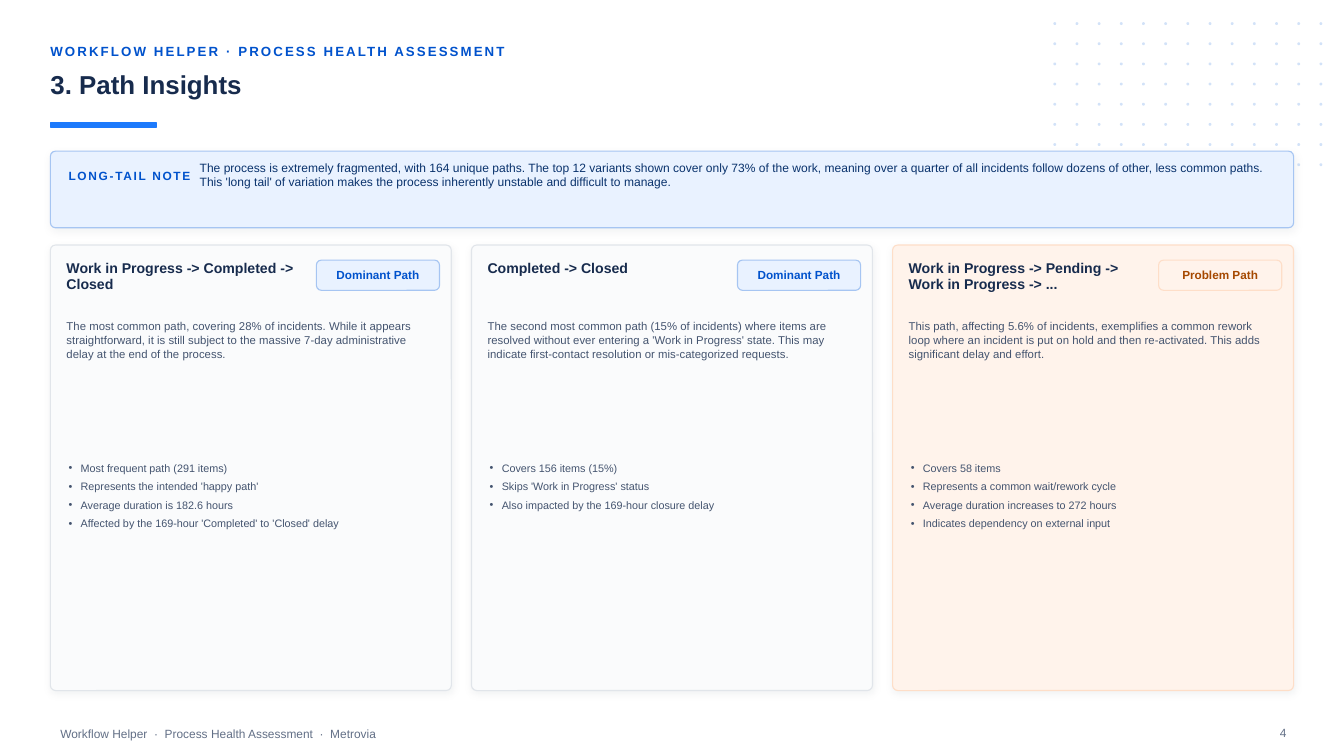
"""Build the path insights slide with a note band and three path cards."""
import itertools

import pptx
import pptx.dml.color
import pptx.enum.shapes
import pptx.enum.text
import pptx.oxml
import pptx.util
from lxml import etree

Pt = pptx.util.Pt
RGBColor = pptx.dml.color.RGBColor
KIND = pptx.enum.shapes.MSO_SHAPE
ANCHOR = pptx.enum.text.MSO_ANCHOR
ALIGN = pptx.enum.text.PP_ALIGN
NS = "http://schemas.openxmlformats.org/drawingml/2006/main"

NAVY = RGBColor(0x17, 0x2B, 0x4D)
DEEP = RGBColor(0x09, 0x32, 0x6C)
BLUE = RGBColor(0x00, 0x52, 0xCC)
BRIGHT = RGBColor(0x1D, 0x7A, 0xFC)
PALE = RGBColor(0xE9, 0xF2, 0xFF)
SKY = RGBColor(0xA6, 0xC5, 0xF2)
DOT = RGBColor(0xCF, 0xE0, 0xF8)
SLATE = RGBColor(0x44, 0x54, 0x6F)
GREY = RGBColor(0x62, 0x6F, 0x86)
CLOUD = RGBColor(0xFA, 0xFB, 0xFC)
EDGE = RGBColor(0xE1, 0xE5, 0xEA)
PEACH = RGBColor(0xFF, 0xF3, 0xEB)
CORAL = RGBColor(0xFE, 0xDE, 0xC8)
RUST = RGBColor(0xA5, 0x48, 0x00)

SHADE = (
    f'<a:effectLst xmlns:a="{NS}"><a:outerShdw blurRad="{Pt(6)}" dist="{Pt(1.5)}" '
    'dir="5400000" algn="ctr" rotWithShape="0"><a:srgbClr val="122A35">'
    '<a:alpha val="6000"/></a:srgbClr></a:outerShdw></a:effectLst>'
)

deck = pptx.Presentation()
deck.slide_width, deck.slide_height = Pt(960), Pt(540)
slide = deck.slides.add_slide(deck.slide_layouts[5])
shapes = slide.shapes


def write(text, size, color, place=None, shape=None, bold=False, lead=None,
          track=0, anchor=ANCHOR.TOP, inset=0, align=ALIGN.LEFT, gap=0):
    shape = shape or shapes.add_textbox(*map(Pt, place))
    frame = shape.text_frame
    frame.text = text
    frame.word_wrap = True
    frame.auto_size = pptx.enum.text.MSO_AUTO_SIZE.NONE
    frame.vertical_anchor = anchor
    frame.margin_left = frame.margin_right = Pt(inset)
    frame.margin_top = frame.margin_bottom = Pt(inset / 2)
    for para in frame.paragraphs:
        para.alignment = align
        if lead:
            para.line_spacing = Pt(lead)
        if gap:
            para.space_after = Pt(gap)
        for run in para.runs:
            run.font.name = "Arial"
            run.font.size = Pt(size)
            run.font.bold = bold
            run.font.color.rgb = color
            if track:
                run.font._element.set("spc", str(int(track * 100)))
    return frame


def panel(kind, place, fill, line=None, width=0.8, corner=None, shade=False):
    shape = shapes.add_shape(kind, *map(Pt, place))
    shape.shadow.inherit = False
    shape.fill.solid()
    shape.fill.fore_color.rgb = fill
    if line is None:
        shape.line.fill.background()
    else:
        shape.line.color.rgb = line
        shape.line.width = Pt(width)
    if corner is not None:
        shape.adjustments[0] = corner
    if shade:
        props = shape._element.spPr
        props.replace(props.find(f"{{{NS}}}effectLst"), pptx.oxml.parse_xml(SHADE))
    return shape


write("Workflow Helper  ·  Process Health Assessment  ·  Metrovia", 8.5, GREY,
      (36, 514.8, 684, 18), anchor=ANCHOR.MIDDLE, inset=7.2)

for row, col in itertools.product(range(8), range(13)):
    if row < 7 or col > 10:
        dot = panel(KIND.OVAL, (752.4 + 15.84 * col, 15.84 + 14.4 * row, 2, 2), DOT)
        tint = dot._element.spPr.find(f".//{{{NS}}}srgbClr")
        etree.SubElement(tint, f"{{{NS}}}alpha", val="92000")

write("WORKFLOW HELPER · PROCESS HEALTH ASSESSMENT", 9.5, BLUE, (36, 28.8, 888, 16),
      bold=True, track=1.5, anchor=ANCHOR.MIDDLE)
title = shapes.title
title.left, title.top, title.width, title.height = map(Pt, (36, 49, 888, 32.4))
write("3. Path Insights", 18.5, NAVY, shape=title, bold=True)
panel(KIND.RECTANGLE, (36, 87.84, 75.6, 3), BRIGHT, BRIGHT, 1)

panel(KIND.ROUNDED_RECTANGLE, (36, 108, 888, 54.72), PALE, SKY, corner=0.066, shade=True)
write("LONG-TAIL NOTE", 8.5, BLUE, (49, 117.5, 108, 16), bold=True, track=1.2,
      anchor=ANCHOR.MIDDLE)
write("The process is extremely fragmented, with 164 unique paths. The top 12 variants "
      "shown cover only 73% of the work, meaning over a quarter of all incidents follow "
      "dozens of other, less common paths. This 'long tail' of variation makes the "
      "process inherently unstable and difficult to manage.",
      8.6, DEEP, (142.6, 114.5, 766.8, 30), lead=10.4)

calm = (CLOUD, EDGE, "Dominant Path", PALE, SKY, BLUE)
alert = (PEACH, CORAL, "Problem Path", PEACH, CORAL, RUST)
cards = [
    (calm, "Work in Progress -> Completed -> Closed",
     "The most common path, covering 28% of incidents. While it appears straightforward, "
     "it is still subject to the massive 7-day administrative delay at the end of the "
     "process.",
     ["Most frequent path (291 items)", "Represents the intended 'happy path'",
      "Average duration is 182.6 hours",
      "Affected by the 169-hour 'Completed' to 'Closed' delay"]),
    (calm, "Completed -> Closed",
     "The second most common path (15% of incidents) where items are resolved without "
     "ever entering a 'Work in Progress' state. This may indicate first-contact "
     "resolution or mis-categorized requests.",
     ["Covers 156 items (15%)", "Skips 'Work in Progress' status",
      "Also impacted by the 169-hour closure delay"]),
    (alert, "Work in Progress -> Pending -> Work in Progress -> ...",
     "This path, affecting 5.6% of incidents, exemplifies a common rework loop where an "
     "incident is put on hold and then re-activated. This adds significant delay and "
     "effort.",
     ["Covers 58 items", "Represents a common wait/rework cycle",
      "Average duration increases to 272 hours",
      "Indicates dependency on external input"]),
]
GAP = 14.4
WIDE = (888 - 2 * GAP) / 3

for index, (style, name, story, facts) in enumerate(cards):
    fill, line, tag, back, rim, ink = style
    left = 36 + index * (WIDE + GAP)
    panel(KIND.ROUNDED_RECTANGLE, (left, 175, WIDE, 318.24), fill, line,
          corner=0.013, shade=True)
    write(name, 10.1, NAVY, (left + 11.5, 186.5, 175, 30), bold=True, lead=11)
    badge = panel(KIND.ROUNDED_RECTANGLE, (left + 190, 185.8, 88, 21.6), back, rim,
                  corner=0.167)
    write(tag, 8.4, ink, shape=badge, bold=True, anchor=ANCHOR.MIDDLE,
          align=ALIGN.CENTER)
    write(story, 8.1, SLATE, (left + 11.5, 228, 260, 83.5), lead=9.8)
    notes = write("\n".join(facts), 7.7, SLATE, (left + 13, 329.8, 260.6, 149),
                  lead=9.2, gap=4)
    for para in notes.paragraphs:
        props = para._p.get_or_add_pPr()
        props.set("marL", str(Pt(8.64)))
        props.set("indent", str(-Pt(8.64)))
        etree.SubElement(props, f"{{{NS}}}buFont", typeface="Arial")
        etree.SubElement(props, f"{{{NS}}}buChar", char="•")

write("4", 8.5, GREY, (907.2, 514.8, 52, 23.76), inset=7.2)

deck.save("out.pptx")
